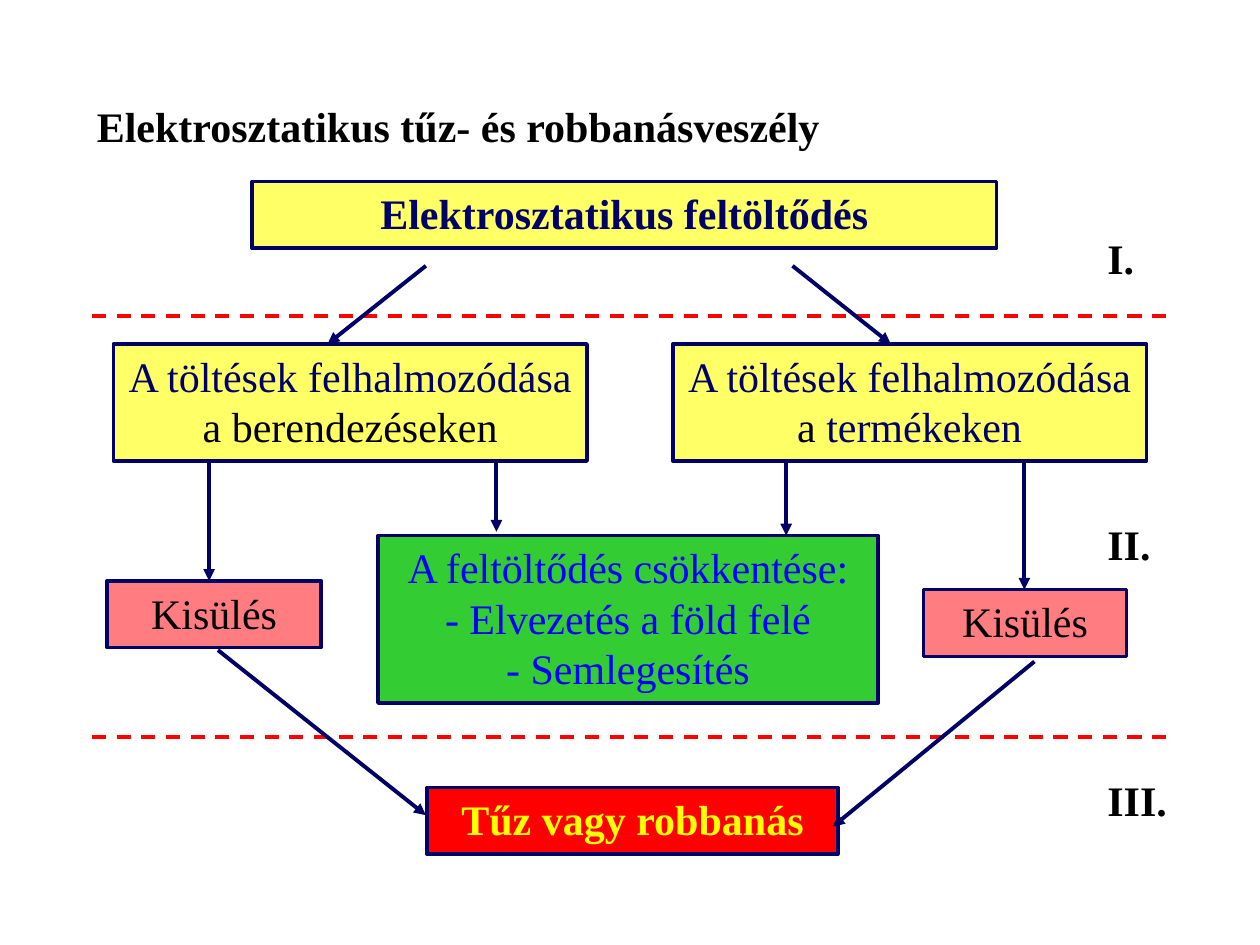
from collections import namedtuple

from lxml import etree
from pptx import Presentation
from pptx.dml.color import RGBColor
from pptx.enum.dml import MSO_LINE
from pptx.enum.shapes import MSO_CONNECTOR, MSO_SHAPE
from pptx.enum.text import MSO_ANCHOR, PP_ALIGN
from pptx.oxml.ns import qn
from pptx.util import Inches, Pt

RECTANGLE = MSO_SHAPE.RECTANGLE
STRAIGHT = MSO_CONNECTOR.STRAIGHT
DASH = MSO_LINE.DASH
TOP = MSO_ANCHOR.TOP
LEFT, CENTER = PP_ALIGN.LEFT, PP_ALIGN.CENTER

BLACK = RGBColor(0x00, 0x00, 0x00)
NAVY = RGBColor(0x00, 0x00, 0x66)
BLUE = RGBColor(0x00, 0x00, 0xFF)
PALE_YELLOW = RGBColor(0xFF, 0xFF, 0x66)
YELLOW = RGBColor(0xFF, 0xFF, 0x00)
PINK = RGBColor(0xFF, 0x7C, 0x80)
GREEN = RGBColor(0x33, 0xCC, 0x33)
RED = RGBColor(0xFF, 0x00, 0x00)

FONT = "Times New Roman"
COLUMNS, ROWS = 100, 75
SLIDE_WIDTH, SLIDE_HEIGHT = Inches(10), Inches(7.5)
NODE_ROWS = 5.3
LABEL_ROWS = 5

Box = namedtuple("Box", "left top width height")


def across(columns):
    return round(columns * SLIDE_WIDTH / COLUMNS)


def down(rows):
    return round(rows * SLIDE_HEIGHT / ROWS)


def place(box):
    return across(box.left), down(box.top), across(box.width), down(box.height)


def inside(box, left, top, width, height):
    return Box(box.left + left, box.top + top, width, height)


def write(frame, lines, color=BLACK, bold=False, align=CENTER, wrap=True):
    frame.word_wrap = wrap
    frame.vertical_anchor = TOP
    for index, line in enumerate(lines):
        paragraph = frame.add_paragraph() if index else frame.paragraphs[0]
        paragraph.alignment = align
        for text, run_color in [(line, color)] if isinstance(line, str) else line:
            run = paragraph.add_run()
            run.text = text
            run.font.name = FONT
            run.font.size = Pt(24)
            run.font.bold = bold
            run.font.color.rgb = run_color


def add_label(slide, box, text, **style):
    label = slide.shapes.add_textbox(*place(box))
    write(label.text_frame, [text], bold=True, **style)


def add_node(slide, box, lines, fill, **style):
    node = slide.shapes.add_shape(RECTANGLE, *place(box))
    node.shadow.inherit = False
    node.fill.solid()
    node.fill.fore_color.rgb = fill
    node.line.color.rgb = NAVY
    node.line.width = Pt(2)
    write(node.text_frame, lines, **style)


def add_line(slide, box, start, end, color, width):
    line = slide.shapes.add_connector(
        STRAIGHT,
        across(box.left + start[0]), down(box.top + start[1]),
        across(box.left + end[0]), down(box.top + end[1]),
    )
    line.line.color.rgb = color
    line.line.width = Pt(width)
    etree.SubElement(line._element.spPr, qn("a:effectLst"))
    return line


def add_arrow(slide, box, start, end):
    arrow = add_line(slide, box, start, end, NAVY, 2.25)
    etree.SubElement(arrow.line._get_or_add_ln(), qn("a:tailEnd"), type="triangle")


def add_stages(slide, box):
    for row in (0, box.height):
        divider = add_line(slide, box, (0, row), (box.width, row), RED, 2)
        divider.line.dash_style = DASH
    for numeral, row in (("I.", -7.1), ("II.", 15.6), ("III.", 35.9)):
        add_label(slide, inside(box, 79.6, row, 6.8, LABEL_ROWS), numeral,
                  align=LEFT, wrap=False)


def add_accumulation(slide, box):
    node_width, node_height = 37.6, 9.3
    node_top = box.height - node_height
    places = (
        (0, [("a berendezéseken", BLACK)]),
        (box.width - node_width, [("a ", BLACK), ("termékeken", NAVY)]),
    )
    for left, place_line in places:
        add_node(slide, inside(box, left, node_top, node_width, node_height),
                 ["A töltések felhalmozódása", place_line], PALE_YELLOW,
                 color=NAVY, wrap=False)
    for start, end in ((24.8, 17), (53.9, 61.7)):
        add_arrow(slide, box, (start, 0), (end, node_top))


def add_discharge(slide, box):
    branches = ((0, 9.4, 17, 8.1), (64.8, 10.1, 16.1, 72.8))
    for left, top, width, arrow_column in branches:
        add_node(slide, inside(box, left, top, width, NODE_ROWS), ["Kisülés"], PINK)
        add_arrow(slide, box, (arrow_column, 0), (arrow_column, top))


def add_reduction(slide, box):
    node_height = 13.3
    node_top = box.height - node_height
    add_node(slide, inside(box, 0, node_top, box.width, node_height),
             ["A feltöltődés csökkentése:", "- Elvezetés a föld felé", "- Semlegesítés"],
             GREEN, color=BLUE)
    for column, end in ((9.4, node_top - 0.3), (32.4, node_top)):
        add_arrow(slide, box, (column, 0), (column, end))


def add_outcome(slide, box):
    add_node(slide, inside(box, 16.6, box.height - NODE_ROWS, 32.6, NODE_ROWS),
             ["Tűz vagy robbanás"], RED, color=YELLOW, bold=True)
    add_arrow(slide, box, (0, 0), (16.5, 13.1))
    add_arrow(slide, box, (box.width, 0.9), (48.8, 14))


def main():
    deck = Presentation()
    deck.slide_width, deck.slide_height = SLIDE_WIDTH, SLIDE_HEIGHT
    slide = deck.slides.add_slide(deck.slide_layouts[6])
    add_label(slide, Box(6.7, 7.5, 85.8, LABEL_ROWS),
              "Elektrosztatikus tűz- és robbanásveszély", align=LEFT)
    add_node(slide, Box(20, 14.4, 59.1, NODE_ROWS), ["Elektrosztatikus feltöltődés"],
             PALE_YELLOW, color=NAVY, bold=True)
    add_stages(slide, Box(7.3, 25.1, 85.5, 33.4))
    add_accumulation(slide, Box(9, 21.1, 82, 15.5))
    add_discharge(slide, Box(8.5, 36.7, 80.9, 15.4))
    add_reduction(slide, Box(30, 36.7, 39.7, 19.1))
    add_outcome(slide, Box(17.3, 51.6, 64.8, 16.2))
    deck.save("out.pptx")


if __name__ == "__main__":
    main()
